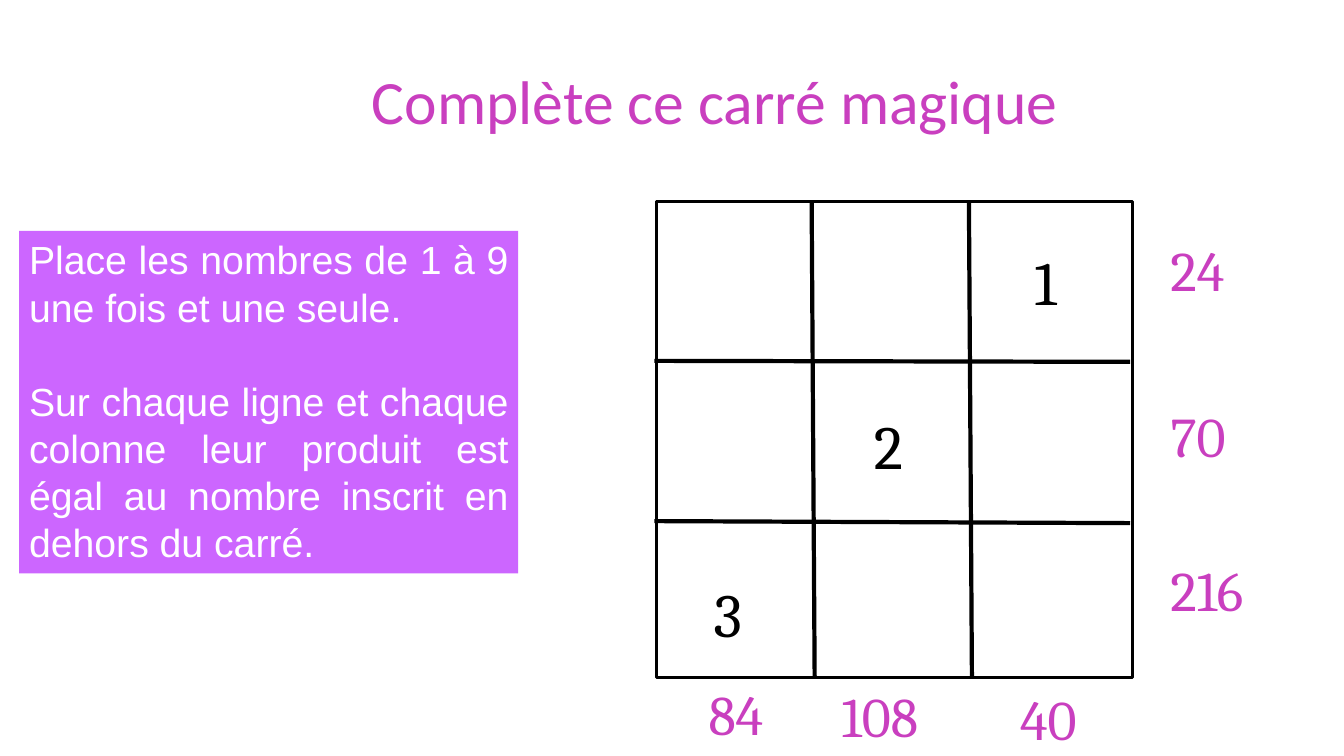
from dataclasses import dataclass

from pptx import Presentation
from pptx.dml.color import RGBColor
from pptx.enum.shapes import MSO_CONNECTOR, MSO_SHAPE
from pptx.enum.text import MSO_ANCHOR, MSO_AUTO_SIZE, PP_ALIGN
from pptx.oxml.ns import qn
from pptx.shapes.base import BaseShape
from pptx.slide import Slide
from pptx.util import Pt

PX = 9144  # 100 px to the inch
RECT = MSO_SHAPE.RECTANGLE
LINE = MSO_CONNECTOR.STRAIGHT
GROW = MSO_AUTO_SIZE.SHAPE_TO_FIT_TEXT
TOP = MSO_ANCHOR.TOP
LEFT, JUST = PP_ALIGN.LEFT, PP_ALIGN.JUSTIFY
HEX = {"ink": "000000", "pink": "C93FBF", "violet": "CC66FF", "white": "FFFFFF"}


@dataclass
class Label:
    text: str
    x: int
    y: int
    w: int
    h: int
    size: int
    color: str
    font: str = "Cambria"
    wrap: bool = False


@dataclass
class Rule:
    x1: int
    y1: int
    x2: int
    y2: int


def given(text: str, x: int, y: int) -> Label:
    """A number already placed in the square."""
    return Label(text, x, y, 54, 84, 44, "ink")


def product(text: str, x: int, y: int) -> Label:
    """A product written beside a row or column."""
    return Label(text, x, y, 82 if len(text) == 2 else 113, 77, 40, "pink")


TITLE = Label("Complète ce carré magique", 359, 58, 932, 84, 44, "pink", "Calibri", True)
LABELS = [
    TITLE,
    given("1", 1016, 237), given("2", 857, 400), given("3", 698, 566),
    product("24", 1151, 229), product("70", 1151, 393), product("216", 1151, 546),
    product("84", 693, 669), product("108", 825, 671), product("40", 1002, 674),
]
RULES = [Rule(x, 200, x + 3, 673) for x in (805, 961)]
RULES += [Rule(649, 358, 1121, 359), Rule(649, 517, 1121, 519)]
TASK = [
    "Place les nombres de 1 à 9 une fois et une seule.",
    "Sur chaque ligne et chaque colonne leur produit est égal au nombre "
    "inscrit en dehors du carré.",
]


def rgb(name: str) -> RGBColor:
    return RGBColor.from_string(HEX[name])


def write(shape: BaseShape, lines: list[str], label: Label, align: PP_ALIGN = LEFT) -> None:
    frame = shape.text_frame
    frame.text = "\n".join(lines)
    frame.word_wrap = label.wrap
    frame.auto_size = GROW
    frame.vertical_anchor = TOP
    for para in frame.paragraphs:
        para.alignment = align
        para.font.name = label.font
        para.font.size = Pt(label.size)
        para.font.color.rgb = rgb(label.color)


def add_label(slide: Slide, label: Label) -> None:
    box = slide.shapes.add_textbox(*(n * PX for n in (label.x, label.y, label.w, label.h)))
    write(box, [label.text], label)


def add_rect(slide: Slide, x: int, y: int, w: int, h: int, fill: str) -> BaseShape:
    rect = slide.shapes.add_shape(RECT, x * PX, y * PX, w * PX, h * PX)
    rect.shadow.inherit = False
    rect.fill.solid()
    rect.fill.fore_color.rgb = rgb(fill)
    rect.line.fill.background()
    return rect


def add_rule(slide: Slide, rule: Rule) -> None:
    line = slide.shapes.add_connector(
        LINE, *(n * PX for n in (rule.x1, rule.y1, rule.x2, rule.y2)))
    line.line.color.rgb = rgb("ink")
    line.line.width = Pt(3)
    props = line._element.spPr
    props.append(props.makeelement(qn("a:effectLst"), {}))


def add_task(slide: Slide) -> None:
    label = Label("", 19, 229, 495, 340, 28, "white", "Arial", True)
    panel = add_rect(slide, label.x, label.y, label.w, label.h, "violet")
    write(panel, TASK, label, JUST)
    panel.text_frame.paragraphs[1].space_before = Pt(34)


def main() -> None:
    deck = Presentation()
    deck.slide_width, deck.slide_height = 1333 * PX, 750 * PX
    slide = deck.slides.add_slide(deck.slide_layouts[6])
    square = add_rect(slide, 651, 200, 472, 472, "white")
    square.line.color.rgb = rgb("ink")
    square.line.width = Pt(2)
    for rule in RULES:
        add_rule(slide, rule)
    for label in LABELS:
        add_label(slide, label)
    add_task(slide)
    deck.save("out.pptx")


if __name__ == "__main__":
    main()
